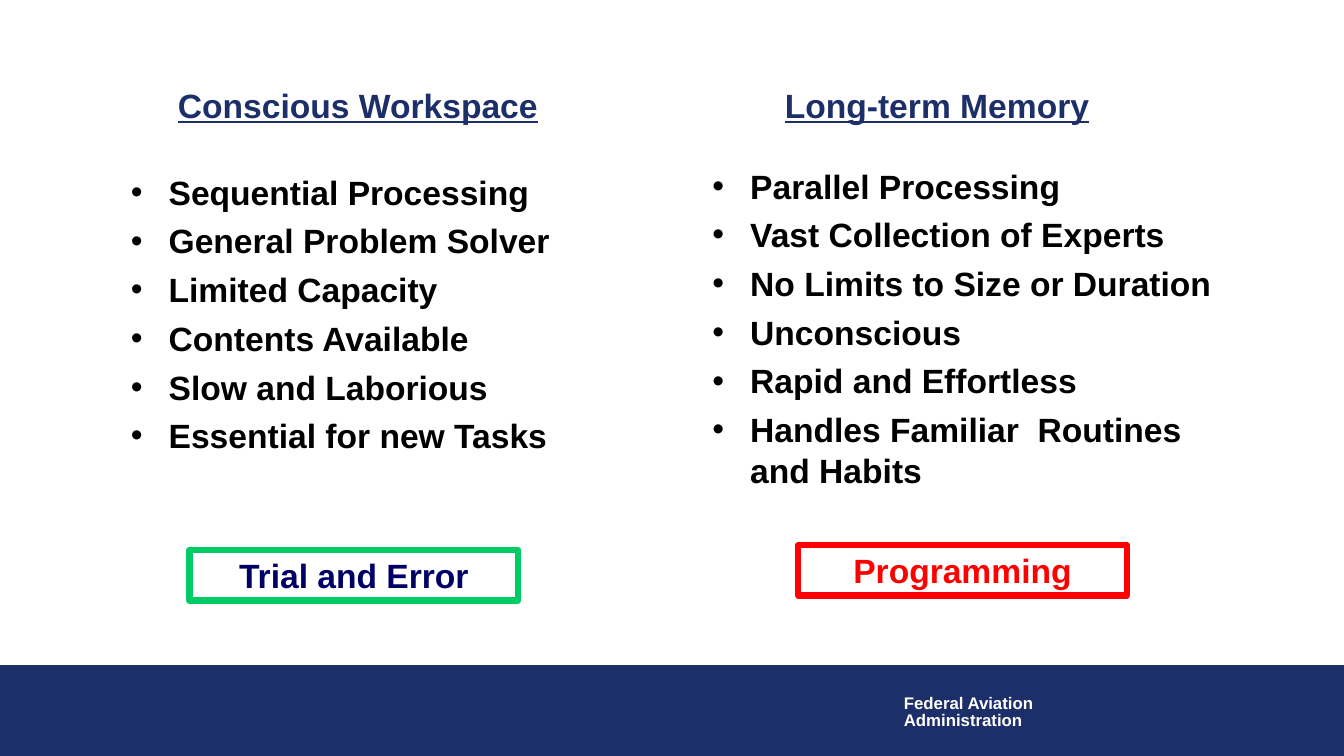
"""Build a slide comparing the conscious workspace with long-term memory."""
from lxml.etree import SubElement
from pptx import Presentation
from pptx.dml.color import RGBColor
from pptx.enum.shapes import MSO_SHAPE
from pptx.enum.text import MSO_ANCHOR, PP_ALIGN
from pptx.oxml.ns import qn
from pptx.util import Pt

COLORS = {"navy": "1D2F68", "black": "000000", "white": "FFFFFF",
          "green": "00CC66", "indigo": "000066", "red": "FF0000"}
FONT = "Arial"
AGENCY = ["Federal Aviation", "Administration"]
COLUMNS = [
    {"heading": "Conscious Workspace", "tab": 33.5,
     "traits": ["Sequential Processing", "General Problem Solver",
                "Limited Capacity", "Contents Available",
                "Slow and Laborious", "Essential for new Tasks"],
     "traits_at": (86.4, 119, 332, 222),
     "mode": "Trial and Error", "mode_at": (135.4, 393),
     "border": "green", "ink": "indigo"},
    {"heading": "Long-term Memory", "tab": 467,
     "traits": ["Parallel Processing", "Vast Collection of Experts",
                "No Limits to Size or Duration", "Unconscious",
                "Rapid and Effortless",
                "Handles Familiar  Routines and Habits"],
     "traits_at": (501.8, 114.6, 371, 281),
     "mode": "Programming", "mode_at": (570.2, 389.5),
     "border": "red", "ink": "red"},
]
TITLE_AT = (86.4, 45.4, 786, 59)
BAND_AT = (0, 475.2, 960, 64.8)
AGENCY_AT = (638.6, 493.2, 108, 31.7)
MODE_SIZE = (234.7, 36)
BULLET_INDENT = 27


def color(name):
    return RGBColor.from_string(COLORS[name])


def points(lengths):
    return [Pt(length) for length in lengths]


def style(font, size, ink):
    font.name, font.size, font.bold = FONT, Pt(size), True
    font.color.rgb = color(ink)


def add_rectangle(slide, at, border, width):
    rectangle = slide.shapes.add_shape(MSO_SHAPE.RECTANGLE, *points(at))
    rectangle.shadow.inherit = False
    rectangle.fill.background()
    rectangle.line.color.rgb = color(border)
    rectangle.line.width = Pt(width)
    return rectangle


def add_footer(slide):
    band = add_rectangle(slide, BAND_AT, "navy", 0.75)
    band.fill.solid()
    band.fill.fore_color.rgb = color("navy")
    frame = slide.shapes.add_textbox(*points(AGENCY_AT)).text_frame
    frame.text = "\n".join(AGENCY)
    for line in frame.paragraphs:
        line.line_spacing = 0.85
        style(line.runs[0].font, 12, "white")


def add_title(slide):
    title = slide.shapes.title
    title.left, title.top, title.width, title.height = points(TITLE_AT)
    frame = title.text_frame
    frame.vertical_anchor = MSO_ANCHOR.MIDDLE
    headings = frame.paragraphs[0]
    headings.alignment = PP_ALIGN.LEFT
    tabs = SubElement(headings._p.get_or_add_pPr(), qn("a:tabLst"))
    for column in COLUMNS:
        SubElement(tabs, qn("a:tab"), pos=str(Pt(column["tab"])), algn="l")
        for text, underline in (("\t", False), (column["heading"], True)):
            run = headings.add_run()
            run.text = text
            style(run.font, 24, "navy")
            run.font.underline = underline


def add_traits(slide, column):
    frame = slide.shapes.add_textbox(*points(column["traits_at"])).text_frame
    frame.word_wrap = True
    frame.text = "\n".join(column["traits"])
    for number, trait in enumerate(frame.paragraphs):
        properties = trait._p.get_or_add_pPr()
        properties.set("marL", str(Pt(BULLET_INDENT)))
        properties.set("indent", str(-Pt(BULLET_INDENT)))
        SubElement(properties, qn("a:buFont"), typeface=FONT)
        SubElement(properties, qn("a:buChar"), char="•")
        if number:
            trait.space_before = Pt(6)
        style(trait.runs[0].font, 24, "black")


def add_mode(slide, column):
    mode = add_rectangle(slide, column["mode_at"] + MODE_SIZE, column["border"], 4.5)
    frame = mode.text_frame
    frame.text = column["mode"]
    frame.vertical_anchor = MSO_ANCHOR.MIDDLE
    frame.paragraphs[0].alignment = PP_ALIGN.CENTER
    style(frame.paragraphs[0].runs[0].font, 24, column["ink"])


def main():
    deck = Presentation()
    deck.slide_width, deck.slide_height = Pt(960), Pt(540)
    slide = deck.slides.add_slide(deck.slide_layouts[5])
    add_footer(slide)
    add_title(slide)
    for column in COLUMNS:
        add_traits(slide, column)
        add_mode(slide, column)
    deck.save("out.pptx")


if __name__ == "__main__":
    main()
